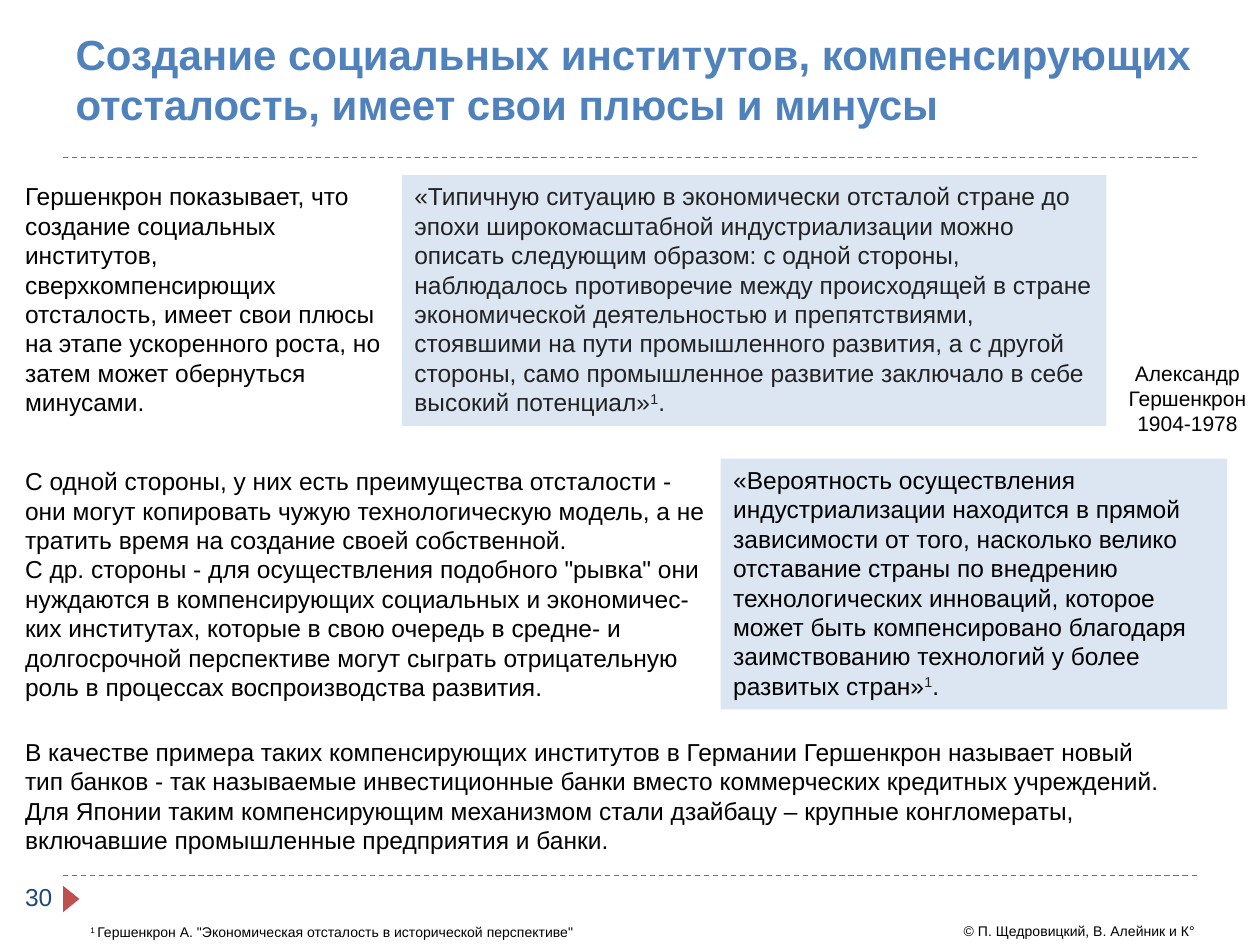
from lxml import etree
from pptx import Presentation
from pptx.dml.color import RGBColor
from pptx.enum.dml import MSO_LINE_DASH_STYLE as DASH
from pptx.enum.shapes import MSO_CONNECTOR, MSO_SHAPE
from pptx.enum.text import MSO_ANCHOR as ANCHOR, MSO_AUTO_SIZE as AUTO, PP_ALIGN as ALIGN
from pptx.oxml.ns import qn
from pptx.util import Inches, Pt

BLACK = RGBColor(0x00, 0x00, 0x00)
WHITE = RGBColor(0xFF, 0xFF, 0xFF)
DARK = RGBColor(0x22, 0x22, 0x22)
BLUE = RGBColor(0x4F, 0x81, 0xBD)
NAVY = RGBColor(0x1F, 0x49, 0x7D)
RED = RGBColor(0xC0, 0x50, 0x4D)
PALE = RGBColor(0xDC, 0xE6, 0xF2)

INSETS = (0.1, 0.05, 0.1, 0.05)
TIGHT_RIGHT = (0.1, 0.05, 0, 0.05)


def write_text(tf, *paragraphs, size=14, color=BLACK, mark_color=None, bold=False,
               align=ALIGN.LEFT, anchor=ANCHOR.TOP, insets=INSETS):
    """Fill a text frame; text between ^ signs becomes superscript."""
    tf.word_wrap = True
    tf.auto_size = AUTO.NONE
    tf.vertical_anchor = anchor
    (tf.margin_left, tf.margin_top,
     tf.margin_right, tf.margin_bottom) = map(Inches, insets)
    for i, text in enumerate(paragraphs):
        p = tf.add_paragraph() if i else tf.paragraphs[0]
        p.alignment = align
        for j, part in enumerate(text.split("^")):
            if not part:
                continue
            raised = j % 2 == 1
            r = p.add_run()
            r.text = part
            r.font.name = "Arial"
            r.font.size = Pt(size)
            r.font.bold = bold
            r.font.color.rgb = mark_color if raised and mark_color else color
            if raised:
                r.font._element.set("baseline", "30000")


class SlideBuilder:
    """Holds the current slide and the look of its parts."""

    def __init__(self, prs):
        self.s = prs.slides.add_slide(prs.slide_layouts[5])

    def title(self, box, text):
        sp = self.s.shapes.title
        sp.left, sp.top, sp.width, sp.height = map(Inches, box)
        write_text(sp.text_frame, text, size=24, color=BLUE, bold=True,
                   anchor=ANCHOR.MIDDLE)

    def text(self, box, *paragraphs, **style):
        sp = self.s.shapes.add_textbox(*map(Inches, box))
        write_text(sp.text_frame, *paragraphs, **style)

    def shape(self, kind, box, fill, rotation=0):
        sp = self.s.shapes.add_shape(kind, *map(Inches, box))
        sp.shadow.inherit = False
        sp.fill.solid()
        sp.fill.fore_color.rgb = fill
        sp.line.fill.background()
        sp.rotation = rotation
        return sp

    def panel(self, box, text, fill=PALE, **style):
        sp = self.shape(MSO_SHAPE.RECTANGLE, box, fill)
        write_text(sp.text_frame, text, **style)

    def rule(self, y):
        line = self.s.shapes.add_connector(
            MSO_CONNECTOR.STRAIGHT, Inches(0.5), Inches(y), Inches(9.5), Inches(y))
        line.line.color.rgb = RED
        line.line.width = Pt(0.75)
        line.line.dash_style = DASH.DASH
        etree.SubElement(line._element.spPr, qn("a:effectLst"))


def main():
    prs = Presentation()
    prs.slide_width, prs.slide_height = Inches(10), Inches(7.5)
    b = SlideBuilder(prs)

    # Frame: rules, page marker, copyright
    for y in (6.95, 1.25):
        b.rule(y)
    b.shape(MSO_SHAPE.ISOSCELES_TRIANGLE, (0.46, 7.07, 0.21, 0.13), RED, rotation=90)
    b.text((7.55, 7.27, 2.42, 0.24), "© П. Щедровицкий, В. Алейник и К°", size=8)
    b.text((0.1, 6.95, 0.45, 0.4), "30", color=NAVY)

    # Title
    b.title((0.5, 0, 9.36, 1.25),
            "Создание социальных институтов, компенсирующих отсталость, "
            "имеет свои плюсы и минусы")

    # Upper row: thesis, quotation, author
    b.text((0.1, 1.39, 3.09, 1.99),
           "Гершенкрон показывает, что создание социальных институтов, "
           "сверхкомпенсирющих отсталость, имеет свои плюсы на этапе ускоренного "
           "роста, но затем может обернуться минусами.",
           insets=TIGHT_RIGHT)
    b.panel((3.19, 1.39, 5.59, 1.99),
            "«Типичную ситуацию в экономически отсталой стране до эпохи "
            "широкомасштабной индустриализации можно описать следующим образом: "
            "с одной стороны, наблюдалось противоречие между происходящей в стране "
            "экономической деятельностью и препятствиями, стоявшими на пути "
            "промышленного развития, а с другой стороны, само промышленное развитие "
            "заключало в себе высокий потенциал»^1^.",
            color=DARK, insets=TIGHT_RIGHT)
    b.text((8.89, 2.86, 1.07, 0.61), "Александр Гершенкрон", "1904-1978",
           size=12, align=ALIGN.CENTER, insets=(0, 0, 0, 0))

    # Middle row: two sides, quotation
    b.text((0.1, 3.65, 5.55, 1.99),
           "С одной стороны, у них есть преимущества отсталости - они могут "
           "копировать чужую технологическую модель, а не тратить время на создание "
           "своей собственной.",
           "С др. стороны - для осуществления подобного \"рывка\" они нуждаются в "
           "компенсирующих социальных и экономичес-ких институтах, которые в свою "
           "очередь в средне- и долгосрочной перспективе могут сыграть отрицательную "
           "роль в процессах воспроизводства развития.",
           insets=TIGHT_RIGHT)
    b.panel((5.72, 3.64, 4.02, 1.99),
            "«Вероятность осуществления индустриализации находится в прямой "
            "зависимости от того, насколько велико отставание страны по внедрению "
            "технологических инноваций, которое может быть компенсировано благодаря "
            "заимствованию технологий у более развитых стран»^1^.",
            mark_color=DARK)

    # Examples and footnote
    b.panel((0.1, 5.8, 9.31, 1.04),
            "В качестве примера таких компенсирующих институтов в Германии "
            "Гершенкрон называет новый тип банков - так называемые инвестиционные "
            "банки вместо коммерческих кредитных учреждений. Для Японии таким "
            "компенсирующим механизмом стали дзайбацу – крупные конгломераты, "
            "включавшие промышленные предприятия и банки.",
            fill=WHITE)
    b.text((0.62, 7.27, 4.3, 0.24),
           "^1 ^Гершенкрон А. \"Экономическая отсталость в исторической перспективе\"",
           size=8, anchor=ANCHOR.BOTTOM)

    prs.save("out.pptx")


if __name__ == "__main__":
    main()
